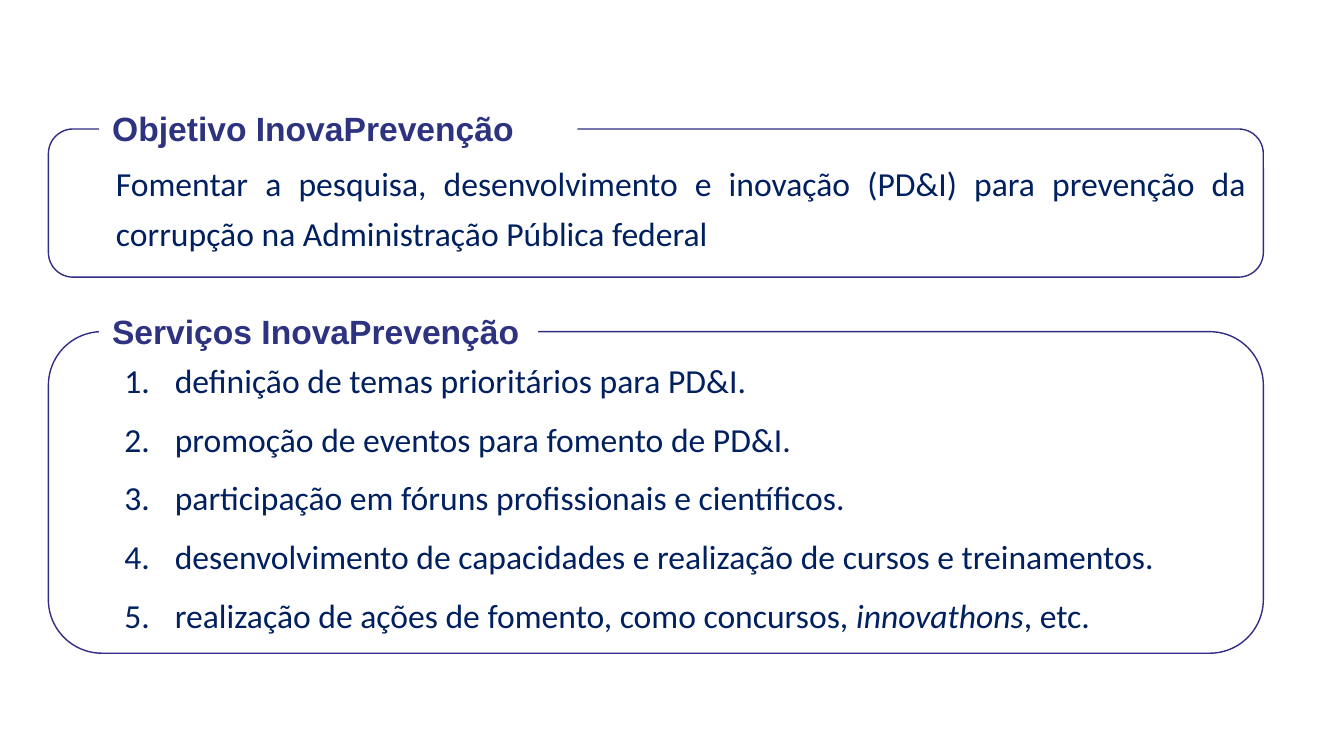
import pptx
import pptx.dml.color
import pptx.enum.shapes
import pptx.enum.text
import pptx.oxml.ns
import pptx.util
from lxml import etree

Inches = pptx.util.Inches
Pt = pptx.util.Pt
ALIGN = pptx.enum.text.PP_ALIGN

COLORS = {"frame": "312D84", "heading": "2D3380", "body": "002060", "white": "FFFFFF"}
HEADING = {"name": "Arial", "size": Pt(24), "bold": True}
BODY = {"name": "Calibri", "size": Pt(24), "bold": False}
LEFT_ALIGNED = {"alignment": ALIGN.LEFT}
OBJECTIVE = {"alignment": ALIGN.JUSTIFY, "level": 1, "line_spacing": 1.25}
SERVICE = {**OBJECTIVE, "space_after": Pt(6)}


def apply(target, values):
    for name, value in values.items():
        setattr(target, name, value)


class Board:
    """Holds the style and the slide being built."""

    def __init__(self, slide):
        self.slide = slide

    def rounded(self, at, line, fill=None):
        shape = self.slide.shapes.add_shape(
            pptx.enum.shapes.MSO_SHAPE.ROUNDED_RECTANGLE, *map(Inches, at))
        shape.shadow.inherit = False
        if fill:
            shape.fill.solid()
            shape.fill.fore_color.rgb = self.color(fill)
        else:
            shape.fill.background()
        shape.line.color.rgb = self.color(line)
        shape.line.width = Pt(1)
        apply(shape.text_frame, {
            "word_wrap": True,
            "vertical_anchor": pptx.enum.text.MSO_ANCHOR.MIDDLE})
        return shape.text_frame

    def color(self, name):
        return pptx.dml.color.RGBColor.from_string(COLORS[name])

    def add_text(self, paragraph, segments, layout, font, color):
        apply(paragraph, layout)
        for text, italic in segments:
            run = paragraph.add_run()
            run.text = text
            apply(run.font, {**font, "italic": italic})
            run.font.color.rgb = self.color(color)

    def indent(self, paragraph, margin, hanging=0, numbered=False):
        properties = paragraph._p.get_or_add_pPr()
        properties.set("marL", str(Inches(margin)))
        properties.set("indent", str(Inches(-hanging)))
        if numbered:
            etree.SubElement(properties, pptx.oxml.ns.qn("a:buFont"), typeface="+mj-lt")
            etree.SubElement(properties, pptx.oxml.ns.qn("a:buAutoNum"), type="arabicPeriod")

    def heading(self, text, at):
        frame = self.rounded(at, "white", "white")
        self.add_text(frame.paragraphs[0], [(text, False)], LEFT_ALIGNED, HEADING, "heading")

    def objective(self, text, at):
        paragraph = self.rounded(at, "frame").paragraphs[0]
        self.indent(paragraph, 0.5)
        self.add_text(paragraph, [(text, False)], OBJECTIVE, BODY, "body")

    def services(self, items, at):
        frame = self.rounded(at, "frame")
        for index, segments in enumerate(items):
            paragraph = frame.add_paragraph() if index else frame.paragraphs[0]
            self.indent(paragraph, 1, hanging=0.5, numbered=True)
            self.add_text(paragraph, segments, SERVICE, BODY, "body")


def main():
    deck = pptx.Presentation()
    apply(deck, {"slide_width": Inches(13.33), "slide_height": Inches(7.5)})
    board = Board(deck.slides.add_slide(deck.slide_layouts[6]))

    # Framed content
    board.services([
        [("definição de temas prioritários para PD&I.", False)],
        [("promoção de eventos para fomento de PD&I.", False)],
        [("participação em fóruns profissionais e científicos.", False)],
        [("desenvolvimento de capacidades e realização de cursos e treinamentos.", False)],
        [("realização de ações de fomento, como concursos, ", False),
         ("innovathons", True), (", etc.", False)],
    ], (0.48, 3.29, 12.05, 3.19))
    board.objective(
        "Fomentar a pesquisa, desenvolvimento e inovação (PD&I) para prevenção da "
        "corrupção na Administração Pública federal", (0.48, 1.28, 12.05, 1.47))

    # Headings that interrupt the top edge of each frame
    board.heading("Objetivo InovaPrevenção", (0.99, 1.02, 4.73, 0.51))
    board.heading("Serviços InovaPrevenção", (0.99, 3.04, 4.34, 0.48))

    deck.save("out.pptx")


if __name__ == "__main__":
    main()
